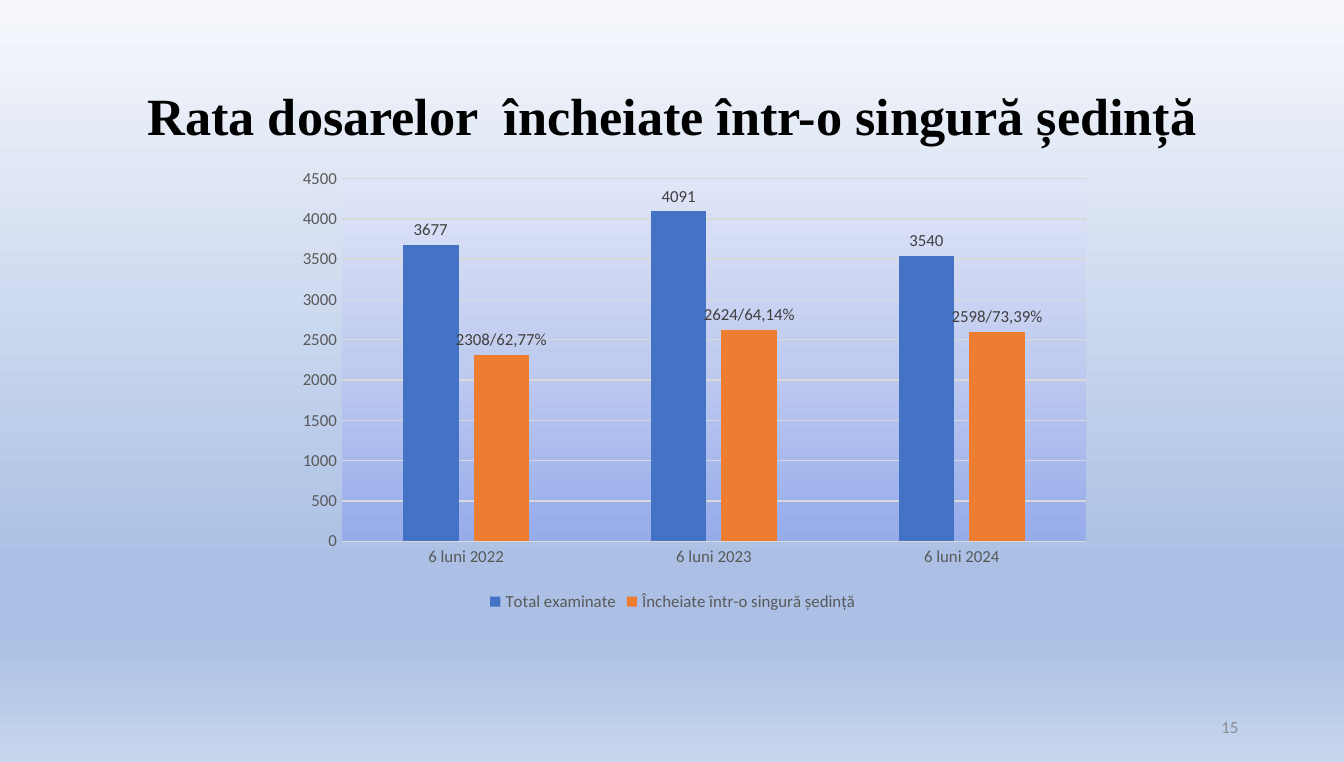
from dataclasses import dataclass

from lxml.etree import SubElement
from pptx import Presentation
from pptx.chart.data import CategoryChartData
from pptx.dml.color import RGBColor
from pptx.enum.chart import XL_CHART_TYPE as ChartType
from pptx.enum.chart import XL_LABEL_POSITION as LabelPosition
from pptx.enum.chart import XL_LEGEND_POSITION as LegendPosition
from pptx.enum.chart import XL_TICK_MARK as TickMark
from pptx.enum.text import MSO_ANCHOR as Anchor
from pptx.enum.text import MSO_AUTO_SIZE as AutoSize
from pptx.enum.text import PP_ALIGN as Align
from pptx.oxml.ns import qn
from pptx.util import Pt


@dataclass(frozen=True)
class Theme:
    title: tuple = ("Times New Roman", 28, "000000", True)
    number: tuple = ("Calibri", 9, "8C8C8C", False)
    chart: tuple = ("Calibri", 10, "000000", False)
    axis: tuple = ("Calibri", 9, "595959", False)
    label: tuple = ("Calibri", 9, "404040", False)
    grid: str = "D9D9D9"
    bars: tuple = ("4472C4", "ED7D31")
    backdrop: tuple = ((0, "F6F8FC"), (74, "ABC0E4"), (83, "ABC0E4"), (100, "C7D5ED"))
    plot: tuple = ((0, "96ABEA"), (50, "C0CBF0"), (100, "E0E5F7"))


THEME = Theme()
CATEGORIES = ("6 luni 2022", "6 luni 2023", "6 luni 2024")
SERIES = {
    "Total examinate": (3677, 4091, 3540),
    "Încheiate într-o singură ședință": (2308, 2624, 2598),
}
SHARES = ("62,77%", "64,14%", "73,39%")


def apply(target, values):
    for name, value in values.items():
        setattr(target, name, value)


def style_font(font, style):
    name, size, color, bold = style
    apply(font, {"name": name, "size": Pt(size), "bold": bold})
    font.color.rgb = RGBColor.from_string(color)


def style_line(line, color):
    line.width = Pt(0.75)
    line.color.rgb = RGBColor.from_string(color)


def add_gradient(parent, stops, angle):
    gradient = SubElement(parent, qn("a:gradFill"), rotWithShape="1")
    stop_list = SubElement(gradient, qn("a:gsLst"))
    for position, color in stops:
        stop = SubElement(stop_list, qn("a:gs"), pos=str(position * 1000))
        SubElement(stop, qn("a:srgbClr"), val=color)
    SubElement(gradient, qn("a:lin"), ang=str(angle * 60000), scaled="0")
    return gradient


def paint_background(page):
    page.background.fill.solid()
    properties = page.element.find(".//" + qn("p:bgPr"))
    solid = properties.find(qn("a:solidFill"))
    properties.replace(solid, add_gradient(properties, THEME.backdrop, 90))


def write_text(box, frame, text, style, align):
    left, top, width, height = map(Pt, frame)
    apply(box, {"left": left, "top": top, "width": width, "height": height})
    apply(box.text_frame, {
        "word_wrap": True,
        "auto_size": AutoSize.NONE,
        "vertical_anchor": Anchor.MIDDLE,
    })
    para = box.text_frame.paragraphs[0]
    para.alignment = align
    span = para.add_run()
    span.text = text
    style_font(span.font, style)


def lay_out_plot(chart, **fractions):
    area = chart.element.find(".//" + qn("c:plotArea"))
    for old in area.findall(qn("c:layout")):
        area.remove(old)
    layout = SubElement(area, qn("c:layout"))
    area.insert(0, layout)
    manual = SubElement(layout, qn("c:manualLayout"))
    settings = {"layoutTarget": "inner", "xMode": "edge", "yMode": "edge", **fractions}
    for name, value in settings.items():
        SubElement(manual, qn("c:" + name), val=str(value))
    add_gradient(SubElement(area, qn("c:spPr")), THEME.plot, 270)


def style_axes(chart):
    for axis in (chart.category_axis, chart.value_axis):
        apply(axis, {"major_tick_mark": TickMark.NONE, "minor_tick_mark": TickMark.NONE})
        style_font(axis.tick_labels.font, THEME.axis)
    style_line(chart.category_axis.format.line, THEME.grid)
    values = chart.value_axis
    apply(values, {"minimum_scale": 0, "maximum_scale": 4500, "major_unit": 500})
    values.format.line.fill.background()
    style_line(values.major_gridlines.format.line, THEME.grid)


def style_series(series, color):
    series.format.fill.solid()
    series.format.fill.fore_color.rgb = RGBColor.from_string(color)
    labels = series.data_labels
    apply(labels, {"show_value": True, "position": LabelPosition.OUTSIDE_END})
    style_font(labels.font, THEME.label)


def label_shares(series):
    for index, (value, share) in enumerate(zip(series.values, SHARES)):
        label = series.points[index].data_label
        span = label.text_frame.paragraphs[0].add_run()
        span.text = f"{value:.0f}/{share}"
        style_font(span.font, THEME.label)
        label.position = LabelPosition.OUTSIDE_END


def add_column_chart(page, frame):
    data = CategoryChartData()
    data.categories = CATEGORIES
    for name, values in SERIES.items():
        data.add_series(name, values)
    chart = page.shapes.add_chart(ChartType.COLUMN_CLUSTERED, *map(Pt, frame), data).chart
    apply(chart, {"has_title": False, "has_legend": True})
    style_font(chart.font, THEME.chart)
    apply(chart.legend, {"position": LegendPosition.BOTTOM, "include_in_layout": False})
    style_font(chart.legend.font, THEME.axis)
    columns = chart.plots[0]
    apply(columns, {"gap_width": 219, "overlap": -27, "vary_by_categories": False})
    style_axes(chart)
    for series, color in zip(columns.series, THEME.bars):
        style_series(series, color)
    label_shares(columns.series[1])
    lay_out_plot(chart, x=0.1, y=0.07, w=0.9, h=0.77)


def main():
    deck = Presentation()
    apply(deck, {"slide_width": Pt(720), "slide_height": Pt(408.24)})
    page = deck.slides.add_slide(deck.slide_layouts[5])
    paint_background(page)
    write_text(page.shapes.title, (36, 24, 648, 75),
               "Rata dosarelor  încheiate într-o singură ședință", THEME.title, Align.CENTER)
    number_frame = (508.5, 378.5, 162, 21.5)
    number_box = page.shapes.add_textbox(*map(Pt, number_frame))
    write_text(number_box, number_frame, "15", THEME.number, Align.RIGHT)
    add_column_chart(page, (139, 78, 443, 252.5))
    deck.save("out.pptx")


if __name__ == "__main__":
    main()
